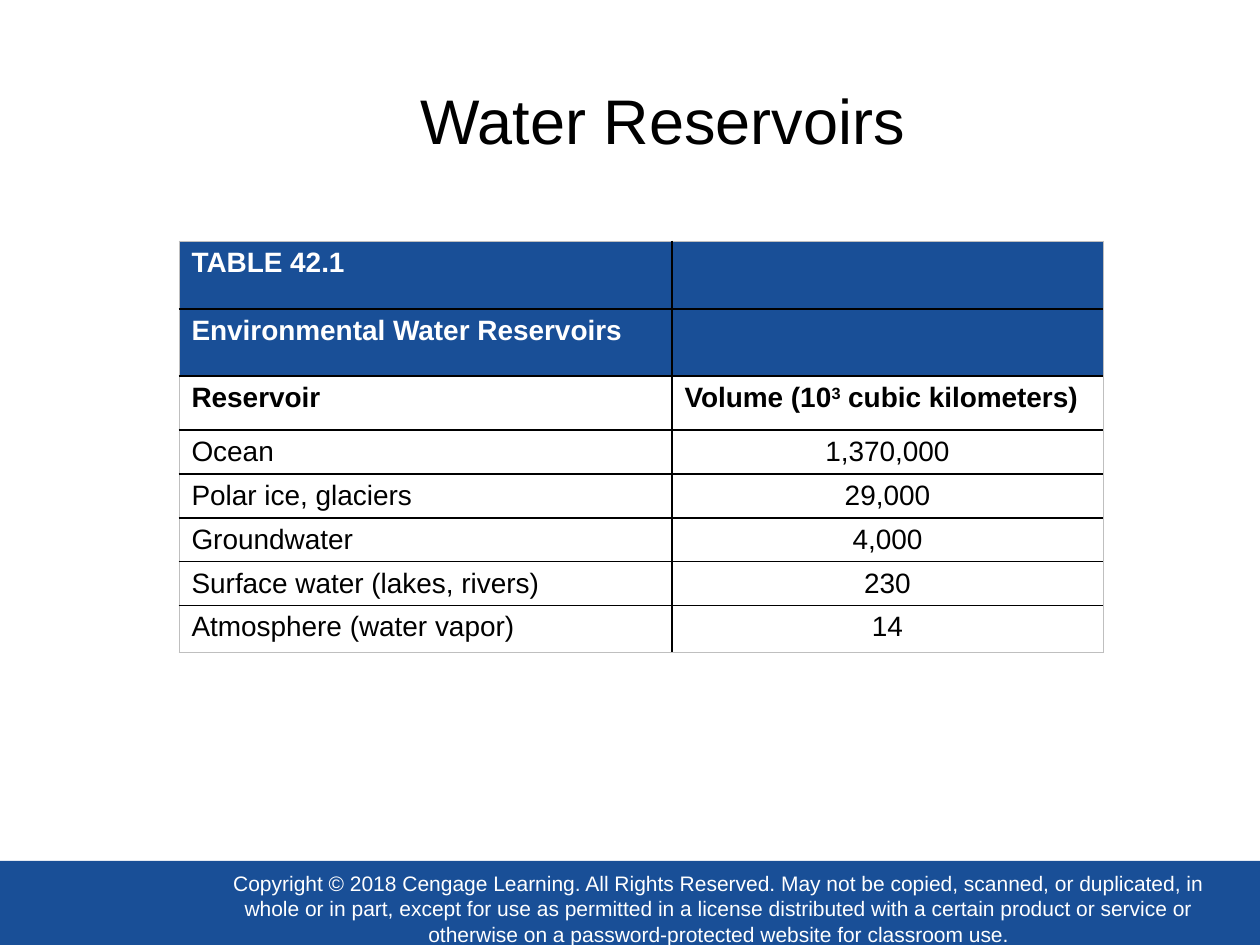
import pptx
import pptx.util
import pptx.dml.color
import pptx.enum.shapes
import pptx.enum.text
import pptx.oxml
import pptx.oxml.ns

PX = 914400 // 126
BLUE = pptx.dml.color.RGBColor(0x19, 0x4F, 0x97)
WHITE = pptx.dml.color.RGBColor(0xFF, 0xFF, 0xFF)
BLACK = pptx.dml.color.RGBColor(0, 0, 0)
GREY = pptx.dml.color.RGBColor(0xBF, 0xBF, 0xBF)
CENTER = pptx.enum.text.PP_ALIGN.CENTER
MIDDLE = pptx.enum.text.MSO_ANCHOR.MIDDLE


def add_run(paragraph, text, size, color, bold=False):
    run = paragraph.add_run()
    run.text = text
    run.font.name = "Arial"
    run.font.size = pptx.util.Pt(size)
    run.font.color.rgb = color
    run.font.bold = bold
    return run


def add_border(cell, side, color, width):
    cell._tc.get_or_add_tcPr().append(pptx.oxml.parse_xml(
        f'<a:{side} {pptx.oxml.ns.nsdecls("a")} w="{pptx.util.Pt(width)}">'
        f'<a:solidFill><a:srgbClr val="{color}"/></a:solidFill></a:{side}>'))


presentation = pptx.Presentation()
presentation.slide_width = 1260 * PX
presentation.slide_height = 945 * PX
slide = presentation.slides.add_slide(presentation.slide_layouts[5])
slide.background.fill.solid()
slide.background.fill.fore_color.rgb = WHITE

for box in [(-1, 861, 1261, 85), (210, 872, 1018, 73)]:
    footer = slide.shapes.add_shape(
        pptx.enum.shapes.MSO_SHAPE.RECTANGLE, *[length * PX for length in box])
    footer.shadow.inherit = False
    footer.fill.solid()
    footer.fill.fore_color.rgb = BLUE
    footer.line.fill.background()

frame = footer.text_frame
frame.word_wrap = True
frame.vertical_anchor = MIDDLE
frame.margin_left = frame.margin_right = frame.margin_top = frame.margin_bottom = 0
frame.paragraphs[0].alignment = CENTER
add_run(frame.paragraphs[0],
        "Copyright © 2018 Cengage Learning. All Rights Reserved. May not be copied, "
        "scanned, or duplicated, in whole or in part, except for use as permitted in a "
        "license distributed with a certain product or service or otherwise on a "
        "password-protected website for classroom use.", 12, WHITE)

title = slide.shapes.title
title.left, title.top, title.width, title.height = [
    length * PX for length in (101, 62, 1106, 115)]
title.text_frame.vertical_anchor = MIDDLE
title.text_frame.paragraphs[0].alignment = CENTER
add_run(title.text_frame.paragraphs[0], " Water Reservoirs", 36, BLACK)

rows = [
    ("TABLE 42.1", ""),
    ("Environmental Water Reservoirs", ""),
    ("Reservoir", "Volume (10|3| cubic kilometers)"),
    ("Ocean", "1,370,000"),
    ("Polar ice, glaciers", "29,000"),
    ("Groundwater", "4,000"),
    ("Surface water (lakes, rivers)", "230"),
    ("Atmosphere (water vapor)", "14"),
]
column_widths = [493, 431]
row_heights = [68, 67, 54, 44, 44, 44, 43, 47]
table = slide.shapes.add_table(
    len(rows), 2, 179 * PX, 241 * PX,
    sum(column_widths) * PX, sum(row_heights) * PX).table
table.first_row = False
table.horz_banding = False
for column, width in zip(table.columns, column_widths):
    column.width = width * PX
for row, height in zip(table.rows, row_heights):
    row.height = height * PX

last_row = len(rows) - 1
for row_index, texts in enumerate(rows):
    banner = row_index < 2
    for column_index, text in enumerate(texts):
        cell = table.cell(row_index, column_index)
        outer_sides = {"lnL": column_index == 0, "lnR": column_index == 1,
                       "lnT": row_index == 0, "lnB": row_index == last_row}
        for side, outer in outer_sides.items():
            add_border(cell, side, GREY if outer else BLACK, 0.5 if outer else 1)
        if banner:
            cell.fill.solid()
            cell.fill.fore_color.rgb = BLUE
        else:
            cell.fill.background()
        paragraph = cell.text_frame.paragraphs[0]
        if row_index > 2 and column_index == 1:
            paragraph.alignment = CENTER
        if not text:
            continue
        for part_index, part in enumerate(text.split("|")):
            run = add_run(paragraph, part, 16, WHITE if banner else BLACK, row_index < 3)
            if part_index == 1:
                run._r.get_or_add_rPr().set("baseline", "30000")

presentation.save("out.pptx")
